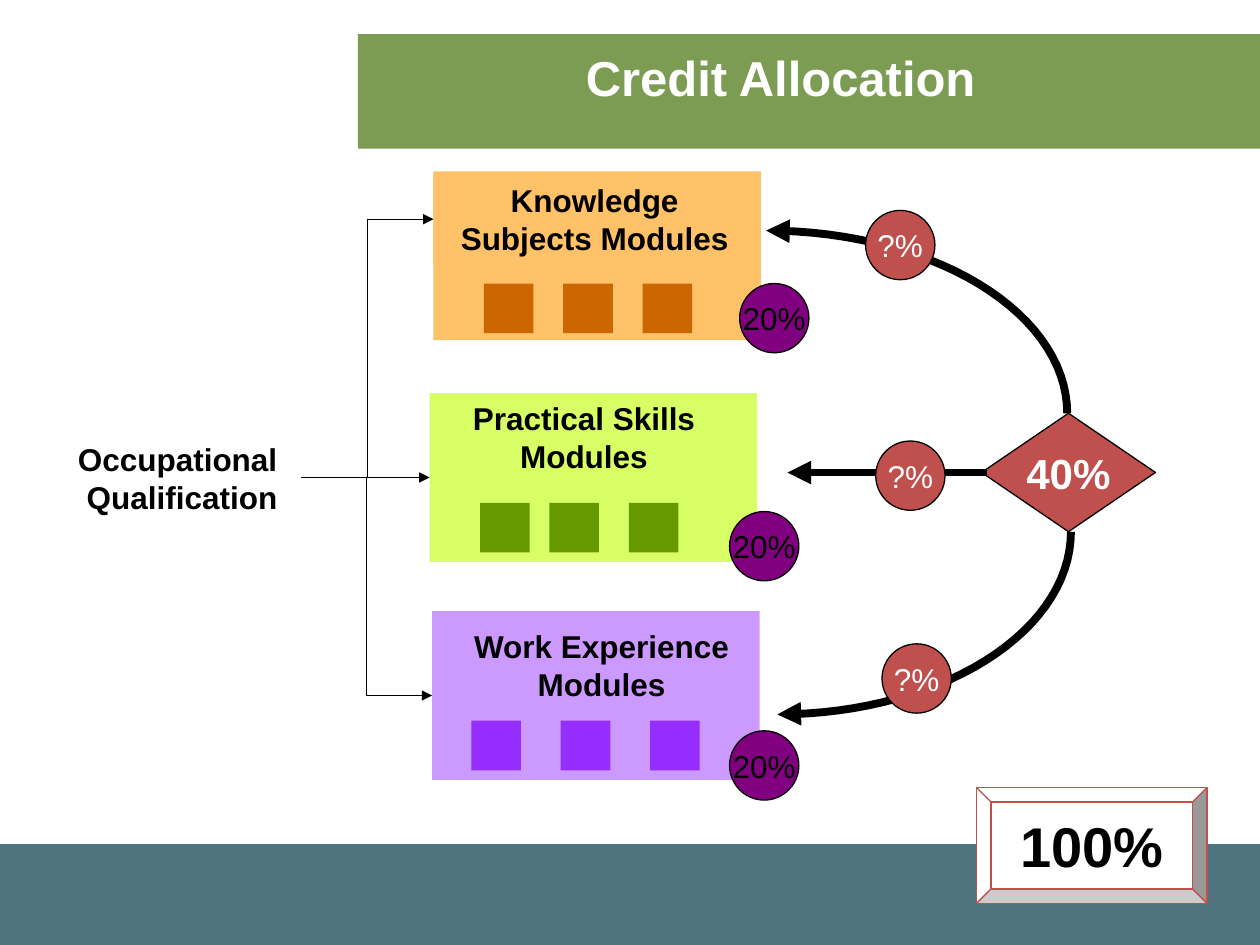
from dataclasses import dataclass
from math import cos, radians, sin

from lxml.etree import SubElement
from pptx import Presentation
from pptx.dml.color import RGBColor
from pptx.enum.shapes import MSO_CONNECTOR, MSO_SHAPE
from pptx.enum.text import MSO_ANCHOR, MSO_AUTO_SIZE, PP_ALIGN
from pptx.oxml.ns import qn
from pptx.slide import Slide
from pptx.util import Inches, Pt

COLUMNS, ROWS = 100, 75
WIDTH, HEIGHT = Inches(10), Inches(7.5)
BLACK, WHITE, RED, PURPLE = "000000", "FFFFFF", "C0504D", "800080"
SQUARE, CIRCLE = 3.94, 5.5


def color(value):
    return RGBColor.from_string(value)


def column(count):
    return round(WIDTH * count / COLUMNS)


def row(count):
    return round(HEIGHT * count / ROWS)


def frame(left, top, width, height):
    return column(left), row(top), column(width), row(height)


def write_text(shape, text, font="Arial", size=18, ink=BLACK, bold=False,
               wrap=True, anchor=MSO_ANCHOR.MIDDLE):
    """Fill a shape with centred text, one paragraph per line."""
    text_frame = shape.text_frame
    text_frame.text = text
    text_frame.auto_size = MSO_AUTO_SIZE.NONE
    text_frame.word_wrap = wrap
    text_frame.vertical_anchor = anchor
    for paragraph in text_frame.paragraphs:
        paragraph.alignment = PP_ALIGN.CENTER
        paragraph.font.name = font
        paragraph.font.size = Pt(size)
        paragraph.font.bold = bold
        paragraph.font.color.rgb = color(ink)


@dataclass
class Board:
    """Draws on one slide, on a grid of 100 columns by 75 rows."""
    slide: Slide
    thin: float = 0.75
    thick: float = 4.5

    def title(self, text, box, **style):
        shape = self.slide.shapes.title
        shape.left, shape.top, shape.width, shape.height = frame(*box)
        write_text(shape, text, **style)
        self.slide.shapes._spTree.append(shape._element)

    def block(self, kind, box, fill, line=None, text=None, **style):
        shape = self.slide.shapes.add_shape(kind, *frame(*box))
        shape.shadow.inherit = False
        shape.fill.solid()
        shape.fill.fore_color.rgb = color(fill)
        if line:
            shape.line.color.rgb = color(line)
            shape.line.width = Pt(self.thin)
        else:
            shape.line.fill.background()
        if text:
            write_text(shape, text, **style)
        return shape

    def rectangle(self, box, fill, **options):
        return self.block(MSO_SHAPE.RECTANGLE, box, fill, **options)

    def label(self, text, box, **style):
        write_text(self.slide.shapes.add_textbox(*frame(*box)), text, **style)

    def circle(self, left, top, fill, text, ink):
        self.block(MSO_SHAPE.OVAL, (left, top, CIRCLE, CIRCLE), fill,
                   line=BLACK, text=text, ink=ink, wrap=False)

    def arrow_line(self, shape, width):
        shape.line.color.rgb = color(BLACK)
        shape.line.width = Pt(width)
        SubElement(shape.line._get_or_add_ln(), qn("a:tailEnd"), type="triangle")

    def connector(self, kind, start, end, width):
        x1, y1 = start
        x2, y2 = end
        shape = self.slide.shapes.add_connector(
            kind, column(x1), row(y1), column(x2), row(y2))
        self.arrow_line(shape, width)
        SubElement(shape._element.spPr, qn("a:effectLst"))
        return shape

    def link(self, source, target, kind):
        """Join the right side of source to the left side of target."""
        shape = self.connector(kind, (0, 0), (1, 1), self.thin)
        shape.begin_connect(source, 3)
        shape.end_connect(target, 1)

    def curve(self, center, radius_x, radius_y, steps=30):
        """Quarter ellipse from its right end; a negative radius_y goes up."""
        x, y = center
        points = []
        for step in range(steps + 1):
            angle = radians(90 * step / steps)
            points.append((column(x + radius_x * cos(angle)),
                           row(y + radius_y * sin(angle))))
        builder = self.slide.shapes.build_freeform(*points[0])
        builder.add_line_segments(points[1:], close=False)
        shape = builder.convert_to_shape()
        shape.shadow.inherit = False
        shape.fill.background()
        self.arrow_line(shape, self.thick)


def main():
    presentation = Presentation()
    presentation.slide_width, presentation.slide_height = WIDTH, HEIGHT
    slide = presentation.slides.add_slide(presentation.slide_layouts[5])
    board = Board(slide)

    board.rectangle((0, 67, 100, 8), "4F737F")
    board.rectangle((28.4, 2.7, 71.6, 9.1), "7B9C52")
    board.title("Credit Allocation", (28.7, 3.3, 66.5, 5.7), size=28,
                ink=WHITE, bold=True, anchor=MSO_ANCHOR.TOP)
    board.block(MSO_SHAPE.DIAMOND, (77.9, 32.8, 13.8, 9.4), RED, line=BLACK,
                text="40%", size=24, ink=WHITE, bold=True, wrap=False)

    caption = dict(bold=True, anchor=MSO_ANCHOR.TOP)
    modules = [  # left, top, fill, square fill, square lefts, square top
        (34.4, 13.6, "FFC269", "CC6600", (38.4, 44.7, 51), 22.5),
        (34.1, 31.2, "D7FF65", "669900", (38.1, 43.6, 49.9), 39.9),
        (34.3, 48.5, "CC99FF", "962DFF", (37.4, 44.5, 51.6), 57.2),
    ]
    panels = []
    for left, top, fill, square_fill, square_lefts, square_top in modules:
        panels.append(board.rectangle((left, top, 26, 13.4), fill))
        for square_left in square_lefts:
            board.rectangle((square_left, square_top, SQUARE, SQUARE), square_fill)
    knowledge = board.rectangle((34.4, 13.9, 25.6, 7), "FFC269",
                                text="Knowledge Subjects Modules", **caption)
    board.label("Practical Skills\nModules", (36.5, 31.2, 19.7, 7), **caption)
    board.label("Work Experience\nModules", (36.6, 49.3, 22.3, 7),
                wrap=False, **caption)
    for left, top in ((58.7, 22.5), (57.9, 40.6), (57.9, 58)):
        board.circle(left, top, PURPLE, "20%", BLACK)

    qualification = board.rectangle(
        (5, 32.5, 18.9, 10.8), WHITE, text="Occupational \nQualification",
        bold=True, wrap=False)
    board.link(qualification, panels[2], MSO_CONNECTOR.ELBOW)
    board.link(qualification, knowledge, MSO_CONNECTOR.ELBOW)
    board.link(qualification, panels[1], MSO_CONNECTOR.STRAIGHT)

    board.block(MSO_SHAPE.BEVEL, (77.5, 62.5, 18.3, 9.2), WHITE, line=RED,
                text="100%", size=32, bold=True)

    board.curve((60.8, 32.8), 23.9, -14.5)
    board.connector(MSO_CONNECTOR.STRAIGHT, (78.3, 37.5), (62.5, 37.5), board.thick)
    board.curve((61.7, 42.2), 23.3, 14.5)
    for left, top in ((68.7, 16.7), (69.5, 35), (70, 51.1)):
        board.circle(left, top, RED, "?%", WHITE)

    presentation.save("out.pptx")


if __name__ == "__main__":
    main()
